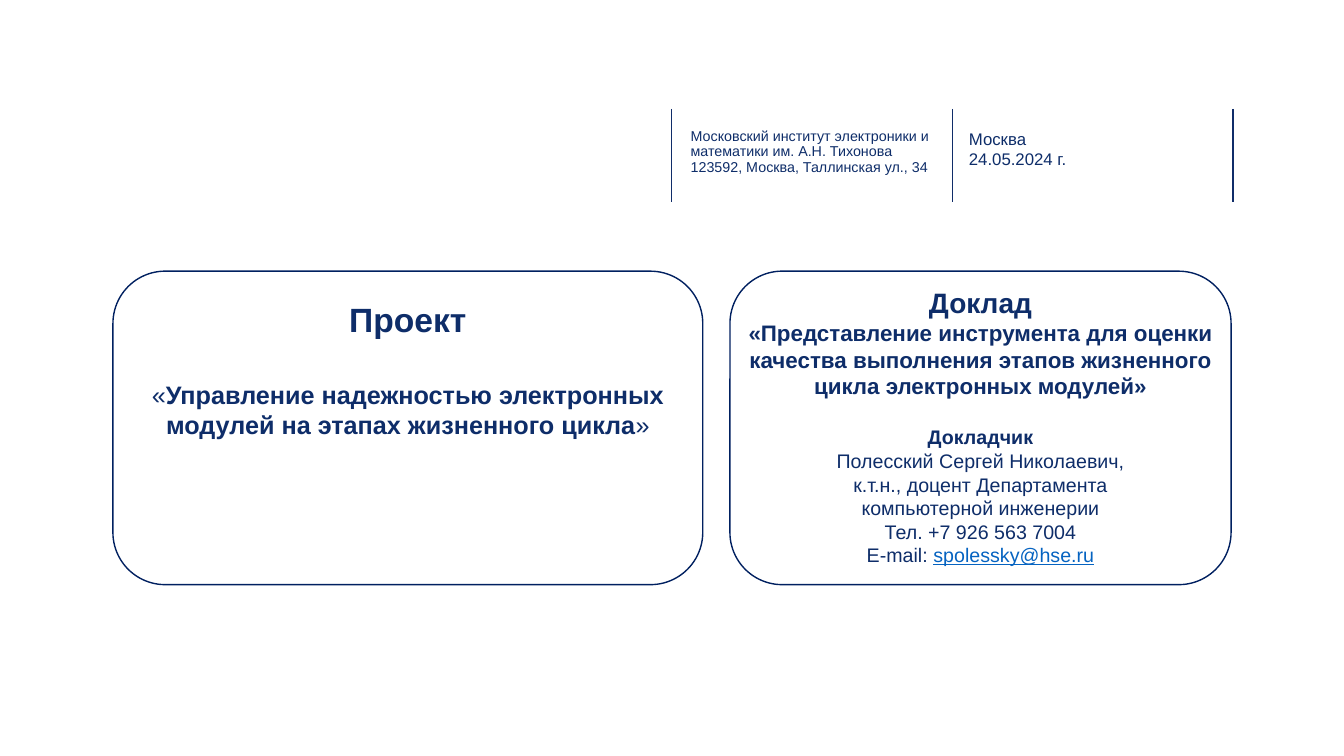
from dataclasses import dataclass
from typing import NamedTuple

from lxml import etree
from pptx import Presentation
from pptx.dml.color import RGBColor
from pptx.enum.shapes import MSO_CONNECTOR, MSO_SHAPE
from pptx.enum.text import MSO_ANCHOR, PP_ALIGN
from pptx.oxml.ns import qn
from pptx.slide import Slide
from pptx.text.text import TextFrame
from pptx.util import Inches, Pt

LINE = MSO_CONNECTOR.STRAIGHT
ROUND = MSO_SHAPE.ROUNDED_RECTANGLE
TOP = MSO_ANCHOR.TOP
LEFT, MID = PP_ALIGN.LEFT, PP_ALIGN.CENTER


@dataclass(frozen=True)
class Theme:
    font: str = "Arial"
    ink: RGBColor = RGBColor(0x0E, 0x2D, 0x69)
    rule: RGBColor = RGBColor(0x10, 0x2D, 0x69)
    edge: RGBColor = RGBColor(0x00, 0x20, 0x60)
    mail: RGBColor = RGBColor(0x05, 0x63, 0xC1)
    head: float = 24
    talk: float = 20
    theme: float = 18
    topic: float = 16
    body: float = 14
    date: float = 12
    small: float = 10.2
    stroke: float = 1


THEME = Theme()


class Box(NamedTuple):
    left: float
    top: float
    width: float
    height: float


class Run(NamedTuple):
    text: str
    size: float
    bold: bool = False
    mail: bool = False


class Para(NamedTuple):
    runs: list[Run]
    before: float = 0


class Block(NamedTuple):
    box: Box
    paras: list[Para]
    align: PP_ALIGN = LEFT
    pitch: float = 1.0


PROJECT = Block(Box(1.12, 2.97, 5.85, 2.83), [
    Para([Run("Проект", THEME.head, True)]),
    Para([Run("«", THEME.theme),
          Run("Управление надежностью электронных модулей на этапах жизненного цикла",
              THEME.theme, True),
          Run("»", THEME.theme)], 28),
], MID)

BLOCKS = [
    Block(Box(6.85, 1.28, 2.49, 0.51), [
        Para([Run("Московский институт электроники и математики им. А.Н. Тихонова",
                  THEME.small)]),
        Para([Run("123592, Москва, Таллинская ул., 34", THEME.small)]),
    ], pitch=0.9),
    Block(Box(9.61, 1.28, 2.43, 0.51), [
        Para([Run("Москва", THEME.date)]),
        Para([Run("24.05.2024 г.", THEME.date)]),
    ]),
    Block(Box(7.24, 2.83, 4.97, 2.83), [
        Para([Run("Доклад", THEME.talk, True)]),
        Para([Run("«Представление инструмента для оценки качества выполнения "
                  "этапов жизненного цикла электронных модулей»", THEME.topic, True)]),
        Para([Run("Докладчик", THEME.body, True)], 18.5),
        Para([Run("Полесский Сергей Николаевич,", THEME.body)]),
        Para([Run("к.т.н., доцент Департамента", THEME.body)]),
        Para([Run("компьютерной инженерии", THEME.body)]),
        Para([Run("Тел. +7 926 563 7004", THEME.body)]),
        Para([Run("E-mail: ", THEME.body), Run("spolessky@hse.ru", THEME.body, mail=True)]),
    ], MID),
]

CARDS = [Box(1.12, 2.69, 5.85, 3.11), Box(7.24, 2.69, 4.97, 3.11)]
RULES = [6.66, 9.45, 12.23]
RULE_TOP, RULE_END = 1.08, 2.0


def write(frame: TextFrame, block: Block) -> None:
    frame.word_wrap = True
    frame.vertical_anchor = TOP
    frame.margin_left = frame.margin_right = Inches(0)
    frame.margin_top = frame.margin_bottom = Inches(0)
    for index, para in enumerate(block.paras):
        line = frame.add_paragraph() if index else frame.paragraphs[0]
        line.alignment = block.align
        line.line_spacing = block.pitch
        line.space_before = Pt(para.before)
        for part in para.runs:
            run = line.add_run()
            run.text = part.text
            run.font.name = THEME.font
            run.font.size = Pt(part.size)
            run.font.bold = part.bold
            run.font.underline = part.mail
            run.font.color.rgb = THEME.mail if part.mail else THEME.ink


def add_rule(slide: Slide, left: float) -> None:
    rule = slide.shapes.add_connector(
        LINE, Inches(left), Inches(RULE_TOP), Inches(left), Inches(RULE_END))
    rule.line.color.rgb = THEME.rule
    rule.line.width = Pt(THEME.stroke)
    etree.SubElement(rule._element.spPr, qn("a:effectLst"))


def add_title(slide: Slide, block: Block) -> None:
    title = slide.shapes.title
    title.left, title.top, title.width, title.height = map(Inches, block.box)
    write(title.text_frame, block)


def add_text(slide: Slide, block: Block) -> None:
    write(slide.shapes.add_textbox(*map(Inches, block.box)).text_frame, block)


def add_card(slide: Slide, box: Box) -> None:
    card = slide.shapes.add_shape(ROUND, *map(Inches, box))
    card.shadow.inherit = False
    card.fill.background()
    card.line.color.rgb = THEME.edge
    card.line.width = Pt(THEME.stroke)


def main() -> None:
    deck = Presentation()
    deck.slide_width, deck.slide_height = Inches(13.33), Inches(7.5)
    slide = deck.slides.add_slide(deck.slide_layouts[5])
    for left in RULES:
        add_rule(slide, left)
    add_title(slide, PROJECT)
    for block in BLOCKS:
        add_text(slide, block)
    for box in CARDS:
        add_card(slide, box)
    deck.save("out.pptx")


if __name__ == "__main__":
    main()
